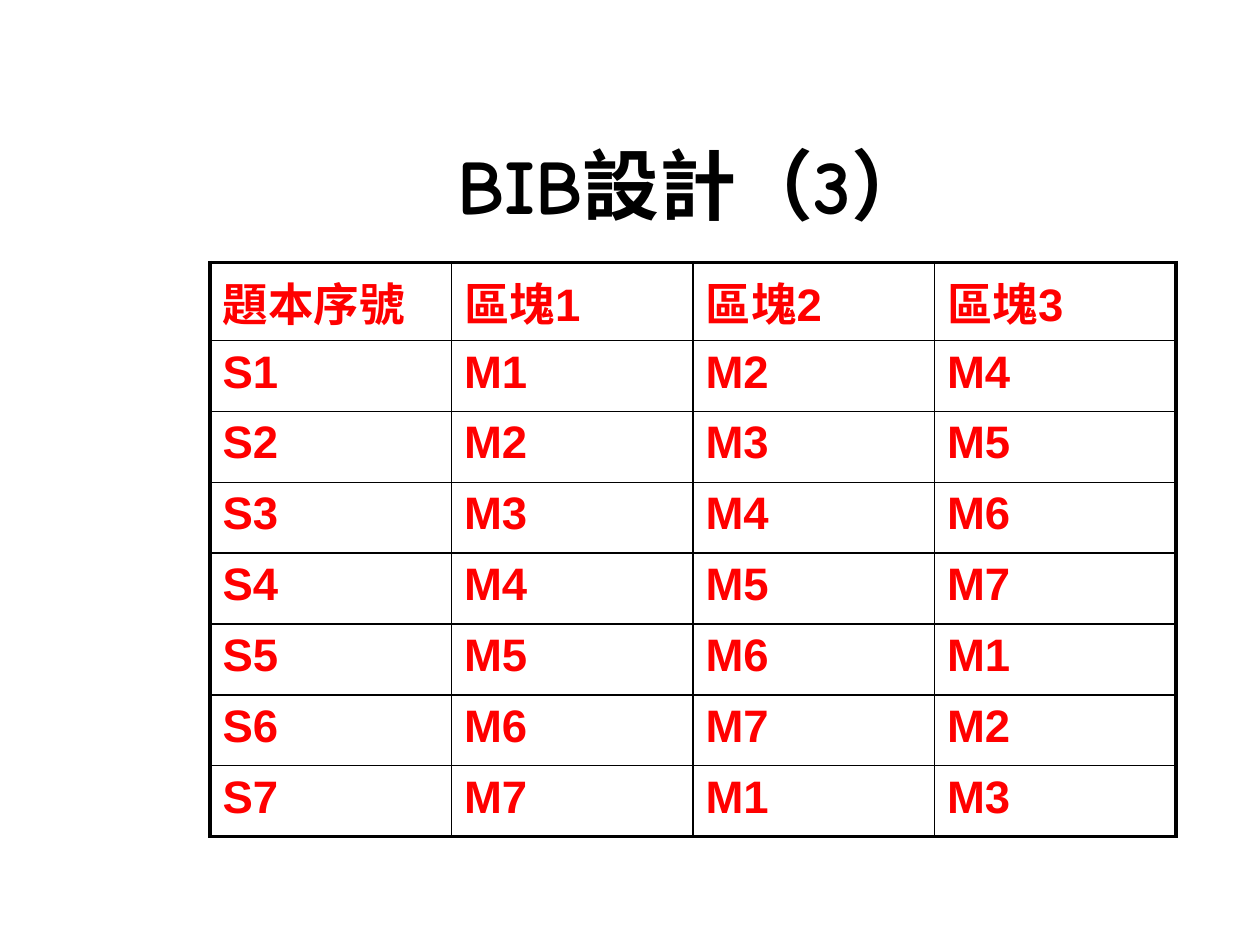
from lxml.etree import SubElement
from pptx import Presentation
from pptx.dml.color import RGBColor
from pptx.enum.text import MSO_ANCHOR, PP_ALIGN
from pptx.oxml.ns import qn
from pptx.util import Inches, Pt

BLACK = RGBColor(0x00, 0x00, 0x00)
RED = RGBColor(0xFF, 0x00, 0x00)
THIN, THICK = Pt(1), Pt(2.25)

# Content: each booklet takes three of the seven blocks, shifted by one
TITLE = "BIB設計（3）"
HEADER = ["題本序號", "區塊1", "區塊2", "區塊3"]
BLOCK_COUNT = 7
FIRST_BOOKLET = [1, 2, 4]
booklets = [
    [f"S{n + 1}"] + [f"M{(block - 1 + n) % BLOCK_COUNT + 1}" for block in FIRST_BOOKLET]
    for n in range(BLOCK_COUNT)
]
design = [HEADER] + booklets

# Title and table share their left edge and width, set in twelfths of an inch
LEFT, WIDTH = Inches(20 / 12), Inches(92 / 12)
TITLE_TOP, TITLE_HEIGHT = Inches(2.5 / 12), Inches(20 / 12)
DESIGN_TOP, DESIGN_HEIGHT = Inches(25 / 12), Inches(4.5)
HEADER_HEIGHT = Inches(0.62)


def style(paragraph, size, font_name, color):
    font = paragraph.font
    font.size, font.name, font.bold = Pt(size), font_name, True
    font.color.rgb = color


def add_borders(cell, widths):
    """Draw the cell's edges; they must come before its fill in the XML."""
    properties = cell._tc.get_or_add_tcPr()
    for edge, width in widths.items():
        line = SubElement(properties, qn(f"a:{edge}"), w=str(width))
        fill = SubElement(line, qn("a:solidFill"))
        SubElement(fill, qn("a:srgbClr"), val=str(BLACK))


prs = Presentation()
prs.slide_width, prs.slide_height = Inches(10), Inches(7.5)
slide = prs.slides.add_slide(prs.slide_layouts[6])

# Title
title = slide.shapes.add_textbox(LEFT, TITLE_TOP, WIDTH, TITLE_HEIGHT).text_frame
title.word_wrap = True
title.vertical_anchor = MSO_ANCHOR.BOTTOM
title.text = TITLE
title.paragraphs[0].alignment = PP_ALIGN.CENTER
style(title.paragraphs[0], 44, "Comic Neue", BLACK)

# Booklet design table
last_row, last_col = len(design) - 1, len(HEADER) - 1
table = slide.shapes.add_table(
    len(design), len(HEADER), LEFT, DESIGN_TOP, WIDTH, DESIGN_HEIGHT
).table
table.first_row = table.horz_banding = False
table.rows[0].height = HEADER_HEIGHT

for r, row in enumerate(design):
    for c, label in enumerate(row):
        cell = table.cell(r, c)
        cell.text = label
        style(cell.text_frame.paragraphs[0], 26, "Arial", RED)
        add_borders(cell, {
            "lnL": THICK if c == 0 else THIN,
            "lnR": THICK if c == last_col else THIN,
            "lnT": THICK if r == 0 else THIN,
            "lnB": THICK if r == last_row else THIN,
        })
        cell.fill.background()

prs.save("out.pptx")
